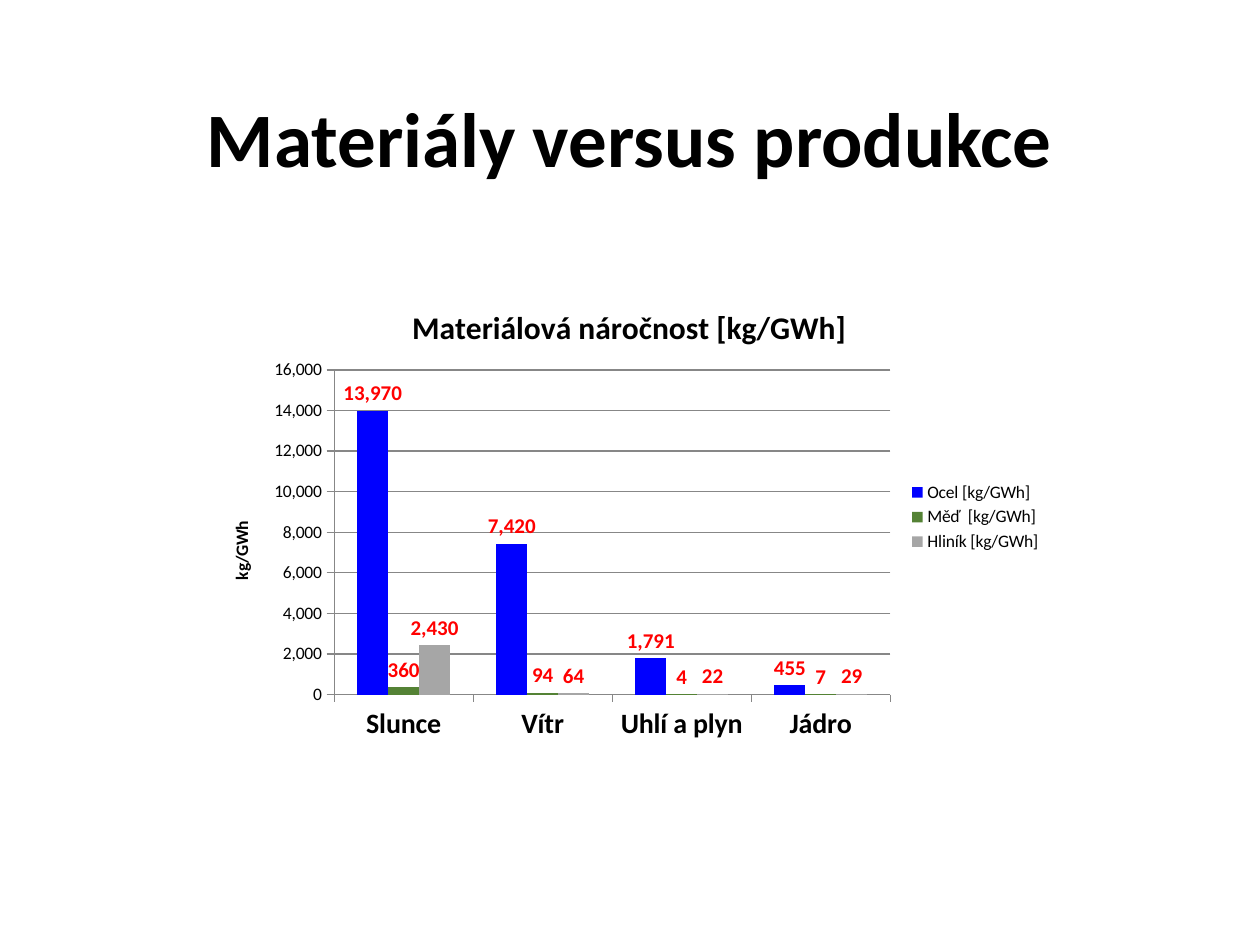
from dataclasses import dataclass

from lxml.etree import SubElement
from pptx import Presentation
from pptx.chart.axis import _BaseAxis
from pptx.chart.chart import Chart
from pptx.chart.data import CategoryChartData
from pptx.chart.series import BarSeries
from pptx.dml.color import RGBColor
from pptx.enum.chart import XL_CHART_TYPE, XL_LABEL_POSITION, XL_LEGEND_POSITION, XL_TICK_MARK
from pptx.enum.text import MSO_ANCHOR, PP_ALIGN
from pptx.oxml.ns import qn
from pptx.slide import Slide
from pptx.text.text import Font
from pptx.util import Pt


@dataclass(frozen=True)
class Theme:
    font: str = "Calibri"
    text: RGBColor = RGBColor(0, 0, 0)
    label: RGBColor = RGBColor(0xFF, 0, 0)
    line: RGBColor = RGBColor(0x87, 0x87, 0x87)
    title_size: int = 44
    chart_title_size: int = 18
    category_size: int = 16
    label_size: int = 12
    body_size: int = 10


@dataclass(frozen=True)
class Material:
    name: str
    values: tuple[int, ...]
    color: RGBColor


THEME = Theme()
NUMBER_FORMAT = "#,##0"
SOURCES = ("Slunce", "Vítr", "Uhlí a plyn", "Jádro")
MATERIALS = (
    Material("Ocel [kg/GWh]", (13970, 7420, 1791, 455), RGBColor(0, 0, 0xFF)),
    Material("Měď  [kg/GWh]", (360, 94, 4, 7), RGBColor(0x54, 0x82, 0x35)),
    Material("Hliník [kg/GWh]", (2430, 64, 22, 29), RGBColor(0xA6, 0xA6, 0xA6)),
)


def style_font(font: Font, size: int, bold: bool = False, color: RGBColor = THEME.text) -> None:
    font.name = THEME.font
    font.size = Pt(size)
    font.bold = bold
    font.color.rgb = color


def add_title(s: Slide, text: str) -> None:
    sp = s.shapes.title
    sp.left, sp.top, sp.width, sp.height = Pt(49.5), Pt(29), Pt(621), Pt(104.5)
    tf = sp.text_frame
    tf.text = text
    tf.vertical_anchor = MSO_ANCHOR.MIDDLE
    p = tf.paragraphs[0]
    p.alignment = PP_ALIGN.CENTER
    p.line_spacing = 0.9
    style_font(p.font, THEME.title_size, bold=True)


def place_plot(chart: Chart, x: float, y: float, w: float, h: float) -> None:
    """Fix the inner plot area, in fractions of the chart's size."""
    area = chart._chartSpace.chart.plotArea
    layout = area.find(qn("c:layout"))
    if layout is None:
        layout = SubElement(area, qn("c:layout"))
        area.insert(0, layout)
    manual = SubElement(layout, qn("c:manualLayout"))
    settings = {"layoutTarget": "inner", "xMode": "edge", "yMode": "edge",
                "x": x, "y": y, "w": w, "h": h}
    for tag, value in settings.items():
        SubElement(manual, qn(f"c:{tag}")).set("val", str(value))


def style_axis(axis: _BaseAxis, size: int, bold: bool = False) -> None:
    axis.major_tick_mark = XL_TICK_MARK.OUTSIDE
    axis.minor_tick_mark = XL_TICK_MARK.NONE
    axis.format.line.color.rgb = THEME.line
    axis.format.line.width = Pt(0.75)
    style_font(axis.tick_labels.font, size, bold)


def style_series(series: BarSeries, color: RGBColor) -> None:
    series.format.fill.solid()
    series.format.fill.fore_color.rgb = color
    series.invert_if_negative = False
    labels = series.data_labels
    labels.show_value = True
    labels.position = XL_LABEL_POSITION.OUTSIDE_END
    labels.number_format = NUMBER_FORMAT
    labels.number_format_is_linked = False
    style_font(labels.font, THEME.label_size, bold=True, color=THEME.label)


def add_material_chart(s: Slide) -> None:
    data = CategoryChartData(number_format=NUMBER_FORMAT)
    data.categories = SOURCES
    for material in MATERIALS:
        data.add_series(material.name, material.values)
    chart = s.shapes.add_chart(XL_CHART_TYPE.COLUMN_CLUSTERED,
                               Pt(116.6), Pt(162), Pt(486), Pt(267), data).chart
    style_font(chart.font, THEME.body_size)
    place_plot(chart, 0.153, 0.185, 0.654, 0.695)

    chart.has_title = True
    value_axis = chart.value_axis
    for owner, text, size in ((chart.chart_title, "Materiálová náročnost [kg/GWh]", THEME.chart_title_size),
                              (value_axis.axis_title, "kg/GWh", THEME.body_size)):
        owner.text_frame.text = text
        style_font(owner.text_frame.paragraphs[0].font, size, bold=True)

    chart.has_legend = True
    chart.legend.position = XL_LEGEND_POSITION.RIGHT
    chart.legend.include_in_layout = False
    style_font(chart.legend.font, THEME.body_size)

    style_axis(chart.category_axis, THEME.category_size, bold=True)
    style_axis(value_axis, THEME.body_size)
    value_axis.minimum_scale, value_axis.maximum_scale, value_axis.major_unit = 0, 16000, 2000
    value_axis.tick_labels.number_format = NUMBER_FORMAT
    value_axis.tick_labels.number_format_is_linked = False
    value_axis.major_gridlines.format.line.color.rgb = THEME.line
    value_axis.major_gridlines.format.line.width = Pt(0.75)

    plot = chart.plots[0]
    plot.gap_width, plot.overlap = 150, 0
    plot.vary_by_categories = False
    for series, material in zip(plot.series, MATERIALS):
        style_series(series, material.color)


def main() -> None:
    prs = Presentation()
    prs.slide_width, prs.slide_height = Pt(720), Pt(540)
    s = prs.slides.add_slide(prs.slide_layouts[5])
    add_title(s, "Materiály versus produkce")
    add_material_chart(s)
    prs.save("out.pptx")


if __name__ == "__main__":
    main()
